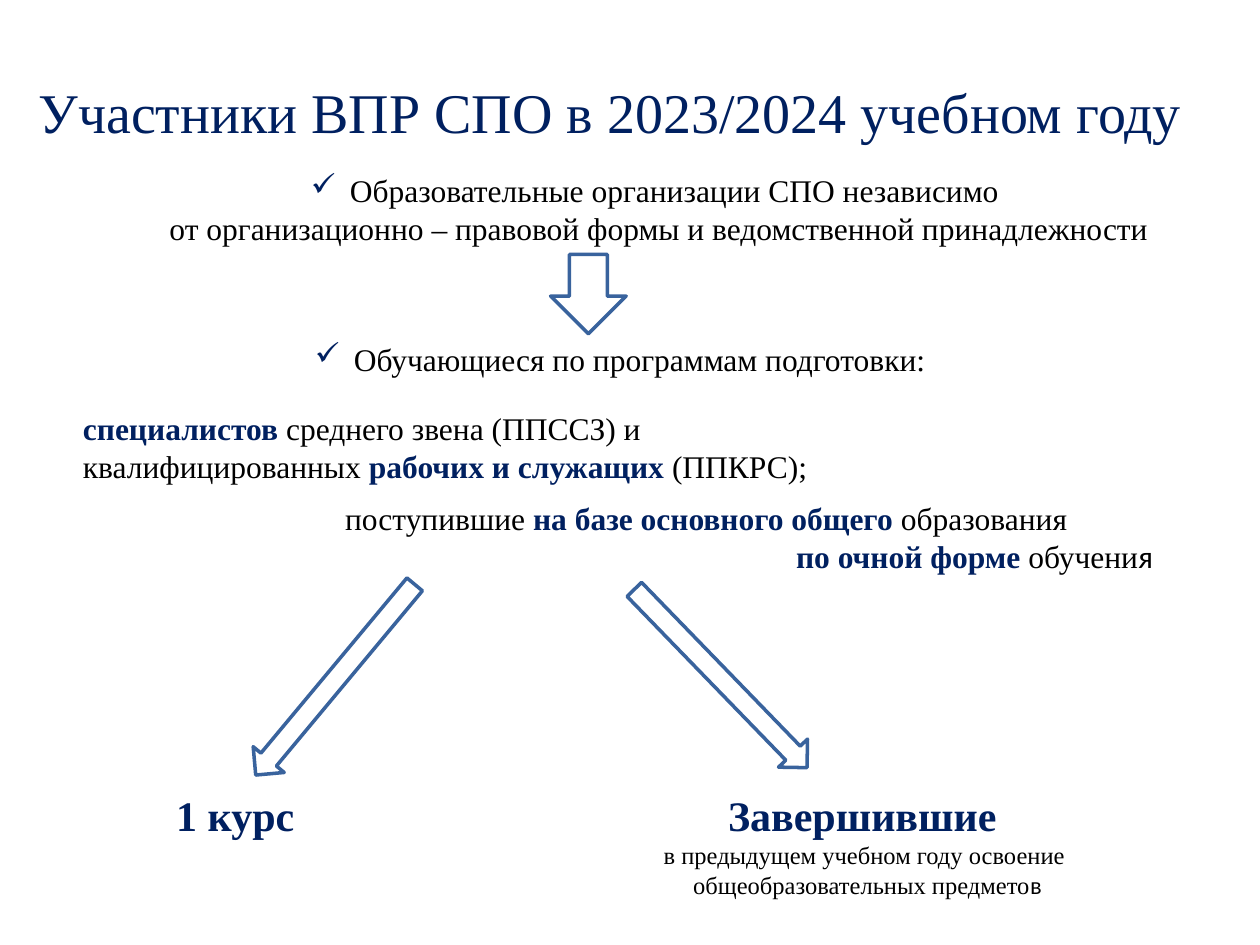
from pptx import Presentation
from pptx import util as u
from pptx.dml.color import RGBColor
from pptx.enum import shapes, text
from pptx.oxml import ns
from lxml import etree

NAVY = RGBColor(0x00, 0x20, 0x60)
BLACK = RGBColor(0x00, 0x00, 0x00)
STEEL = RGBColor(0x39, 0x63, 0x9D)
SERIF, SANS = "Times New Roman", "Calibri"
LEFT, CENTER, RIGHT = (text.PP_ALIGN.LEFT, text.PP_ALIGN.CENTER,
                       text.PP_ALIGN.RIGHT)
PLAIN = dict(name=SERIF, size=u.Pt(18), bold=False, color=BLACK)
STRONG = dict(PLAIN, bold=True, color=NAVY)
HEAD = dict(STRONG, size=u.Pt(24))
SMALL = dict(PLAIN, size=u.Pt(14))
TITLE = dict(PLAIN, size=u.Pt(32), color=NAVY)


class SlideBuilder:
    def __init__(self, slide):
        self.slide = slide

    def place(self, shape, box):
        for side, value in zip(("left", "top", "width", "height"), box):
            setattr(shape, side, u.Inches(value))

    def indent(self, paragraph, margin, first=0):
        props = paragraph._p.get_or_add_pPr()
        props.set("marL", str(u.Inches(margin)))
        props.set("indent", str(u.Inches(first)))
        return props

    def check(self, paragraph, margin):
        props = self.indent(paragraph, margin, -0.31)
        color = etree.SubElement(props, ns.qn("a:buClr"))
        etree.SubElement(color, ns.qn("a:srgbClr"), val=str(NAVY))
        etree.SubElement(props, ns.qn("a:buChar"), char="✓")

    def add_runs(self, paragraph, runs, align=LEFT):
        paragraph.alignment = align
        for words, style in runs:
            run = paragraph.add_run()
            run.text = words
            for key, value in style.items():
                if key == "color":
                    run.font.color.rgb = value
                else:
                    setattr(run.font, key, value)

    def title(self, words, box):
        heading = self.slide.shapes.title
        self.place(heading, box)
        heading.text_frame.vertical_anchor = text.MSO_ANCHOR.MIDDLE
        self.add_runs(heading.text_frame.paragraphs[0], [(words, TITLE)], CENTER)

    def textbox(self, box, lines, wrap=False):
        frame = self.slide.shapes.add_textbox(*map(u.Inches, box)).text_frame
        frame.word_wrap = wrap
        frame.auto_size = text.MSO_AUTO_SIZE.SHAPE_TO_FIT_TEXT
        for number, (align, runs) in enumerate(lines):
            paragraph = frame.add_paragraph() if number else frame.paragraphs[0]
            self.add_runs(paragraph, runs, align)
        return frame.paragraphs

    def arrow(self, box, rotation=0):
        arrow = self.slide.shapes.add_shape(
            shapes.MSO_SHAPE.DOWN_ARROW, *map(u.Inches, box))
        arrow.rotation = rotation
        arrow.shadow.inherit = False
        arrow.fill.background()
        arrow.line.color.rgb = STEEL
        arrow.line.width = u.Pt(2)


def main():
    deck = Presentation()
    deck.slide_width, deck.slide_height = u.Inches(10), u.Inches(7.5)
    page = SlideBuilder(deck.slides.add_slide(deck.slide_layouts[5]))

    page.title("Участники ВПР СПО в 2023/2024 учебном году",
               (0.12, 0.21, 9.45, 1.34))

    organizations = page.textbox((0.28, 1.31, 9.7, 0.71), [
        (CENTER, [("Образовательные организации СПО независимо ", PLAIN)]),
        (CENTER, [("от организационно – правовой формы и ведомственной "
                   "принадлежности", PLAIN)]),
    ], wrap=True)
    page.check(organizations[0], 0.51)
    page.indent(organizations[1], 0.2)

    students = page.textbox((2.4, 2.65, 5.13, 0.4), [
        (LEFT, [("Обучающиеся по программам подготовки:", PLAIN)]),
    ])
    page.check(students[0], 0.31)
    page.arrow((4.37, 2.02, 0.6, 0.63))

    page.textbox((0.56, 3.2, 6.01, 0.71), [
        (LEFT, [("специалистов", STRONG),
                (" среднего звена (ППССЗ) и", PLAIN)]),
        (LEFT, [("квалифицированных ", PLAIN),
                ("рабочих и служащих ", STRONG), ("(ППКРС);", PLAIN)]),
    ])
    page.textbox((2.64, 3.91, 6.61, 0.71), [
        (LEFT, [("поступившие ", PLAIN),
                ("на базе основного общего ", STRONG),
                ("образования", PLAIN)]),
        (RIGHT, [("по очной форме ", STRONG), ("обучени", PLAIN),
                 ("я", dict(PLAIN, name=SANS))]),
    ], wrap=True)

    page.textbox((5.13, 6.22, 3.51, 0.98), [
        (CENTER, [("Завершившие ", HEAD)]),
        (CENTER, [("в предыдущем учебном году освоение ", SMALL)]),
        (CENTER, [("общеобразовательных предмето", SMALL),
                  ("в", dict(SMALL, name=SANS))]),
    ])
    page.textbox((1.3, 6.22, 1.15, 0.5), [(LEFT, [("1 курс", HEAD)])])

    for left, top, rotation in ((2.5, 4.41, 39.8), (5.56, 4.4, 315.9)):
        page.arrow((left, top, 0.32, 1.97), rotation)

    deck.save("out.pptx")


if __name__ == "__main__":
    main()
